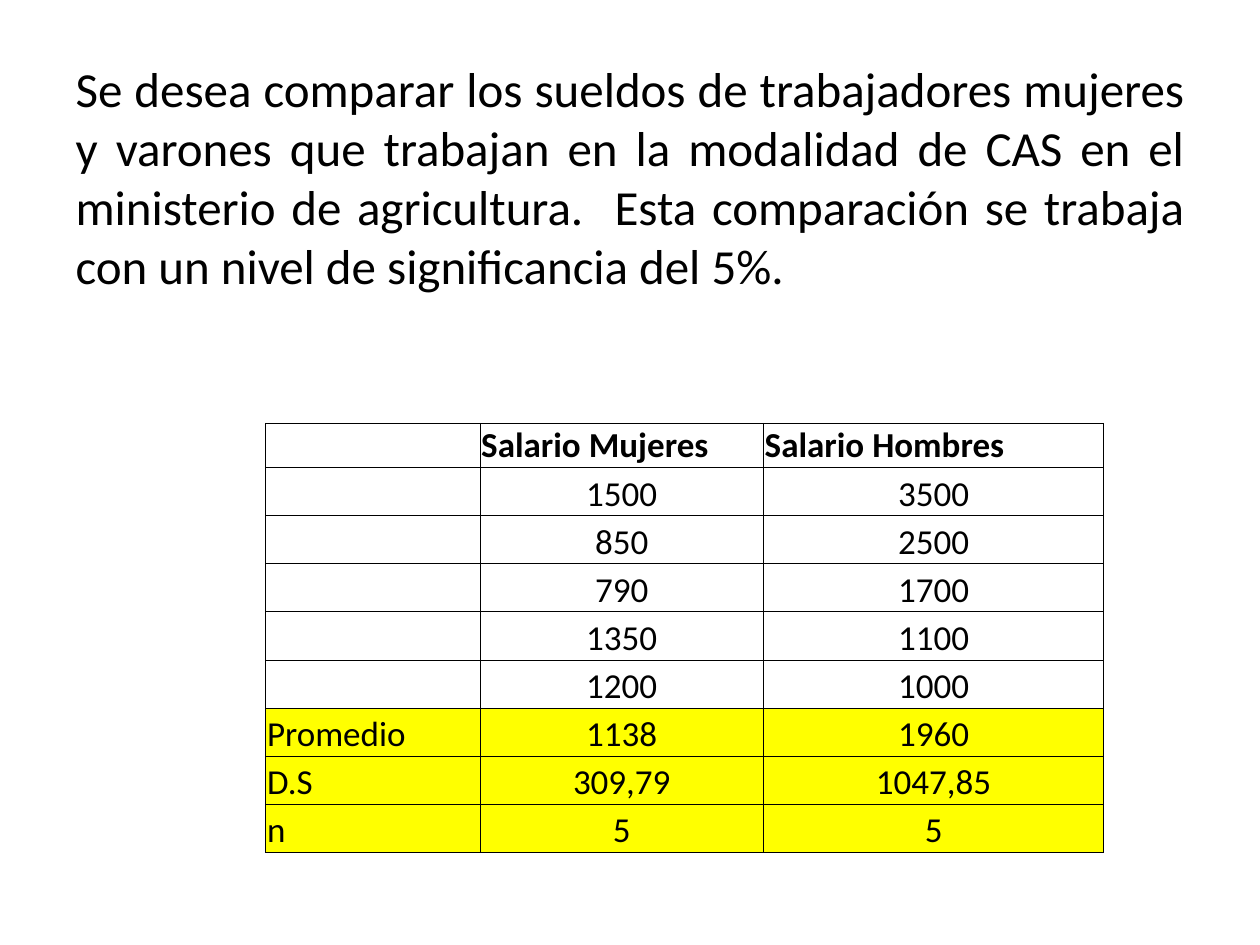
from dataclasses import dataclass
from typing import Any

import lxml.etree
import pptx
import pptx.dml.color
import pptx.enum.text
import pptx.oxml.ns
import pptx.util

Pt = pptx.util.Pt
ALIGN = pptx.enum.text.PP_ALIGN
ANCHOR = pptx.enum.text.MSO_ANCHOR

BLACK = "000000"
YELLOW = "FFFF00"
COLUMN_WIDTHS = (122.4, 162, 194.4)
HEADER_HEIGHT = 25.2
ROW_HEIGHT = 27.5
CELL_FORMAT = {
    "margin_left": Pt(0.7),
    "margin_right": Pt(0.7),
    "margin_top": Pt(0.7),
    "margin_bottom": Pt(0),
    "vertical_anchor": ANCHOR.BOTTOM,
}


@dataclass
class SalaryRow:
    label: str
    women: str
    men: str
    header: bool = False
    fill: str | None = None


SALARY_ROWS = (
    SalaryRow("", "Salario Mujeres", "Salario Hombres", header=True),
    SalaryRow("", "1500", "3500"),
    SalaryRow("", "850", "2500"),
    SalaryRow("", "790", "1700"),
    SalaryRow("", "1350", "1100"),
    SalaryRow("", "1200", "1000"),
    SalaryRow("Promedio", "1138", "1960", fill=YELLOW),
    SalaryRow("D.S", "309,79", "1047,85", fill=YELLOW),
    SalaryRow("n", "5", "5", fill=YELLOW),
)


def apply_format(target: Any, values: dict[str, Any]) -> None:
    for attribute, value in values.items():
        setattr(target, attribute, value)


def set_color(color_format: Any, color: str) -> None:
    color_format.rgb = pptx.dml.color.RGBColor.from_string(color)


def write_text(paragraph: Any, text: str, size: float, bold: bool, align: Any) -> None:
    paragraph.alignment = align
    if text:
        run = paragraph.add_run()
        run.text = text
        apply_format(run.font, {"name": "Calibri", "size": Pt(size), "bold": bold})
        set_color(run.font.color, BLACK)


def add_borders(cell: Any) -> None:
    qn = pptx.oxml.ns.qn
    properties = cell._tc.get_or_add_tcPr()
    for side in ("a:lnL", "a:lnR", "a:lnT", "a:lnB"):
        border = lxml.etree.SubElement(properties, qn(side), w=str(Pt(0.5)))
        solid = lxml.etree.SubElement(border, qn("a:solidFill"))
        lxml.etree.SubElement(solid, qn("a:srgbClr"), val=BLACK)


def format_cell(cell: Any, text: str, row: SalaryRow, centred: bool) -> None:
    apply_format(cell, CELL_FORMAT)
    add_borders(cell)
    if row.fill:
        cell.fill.solid()
        set_color(cell.fill.fore_color, row.fill)
    else:
        cell.fill.background()
    align = ALIGN.CENTER if centred else ALIGN.LEFT
    write_text(cell.text_frame.paragraphs[0], text, 20, row.header, align)


def add_problem(slide: Any) -> None:
    problem = slide.shapes.title
    apply_format(problem, {"left": Pt(36), "top": Pt(21.6), "width": Pt(648), "height": Pt(158.4)})
    apply_format(problem.text_frame, {
        "word_wrap": True,
        "vertical_anchor": ANCHOR.MIDDLE,
        "auto_size": pptx.enum.text.MSO_AUTO_SIZE.NONE,
    })
    write_text(
        problem.text_frame.paragraphs[0],
        "Se desea comparar los sueldos de trabajadores mujeres y varones que trabajan "
        "en la modalidad de CAS en el ministerio de agricultura.  Esta comparación se "
        "trabaja con un nivel de significancia del 5%.",
        28, False, ALIGN.JUSTIFY,
    )


def add_salaries(slide: Any) -> None:
    heights = [HEADER_HEIGHT if row.header else ROW_HEIGHT for row in SALARY_ROWS]
    salaries = slide.shapes.add_table(
        len(SALARY_ROWS), len(COLUMN_WIDTHS),
        Pt(151.9), Pt(241.9), Pt(sum(COLUMN_WIDTHS)), Pt(sum(heights)),
    ).table
    apply_format(salaries, {"first_row": False, "horz_banding": False})
    for column, width in zip(salaries.columns, COLUMN_WIDTHS):
        column.width = Pt(width)
    for index, (row, height) in enumerate(zip(SALARY_ROWS, heights)):
        salaries.rows[index].height = Pt(height)
        for position, text in enumerate((row.label, row.women, row.men)):
            centred = position > 0 and not row.header
            format_cell(salaries.cell(index, position), text, row, centred)


def main() -> None:
    presentation = pptx.Presentation()
    apply_format(presentation, {"slide_width": Pt(720), "slide_height": Pt(540)})
    slide = presentation.slides.add_slide(presentation.slide_layouts[5])
    add_problem(slide)
    add_salaries(slide)
    presentation.save("out.pptx")


if __name__ == "__main__":
    main()
